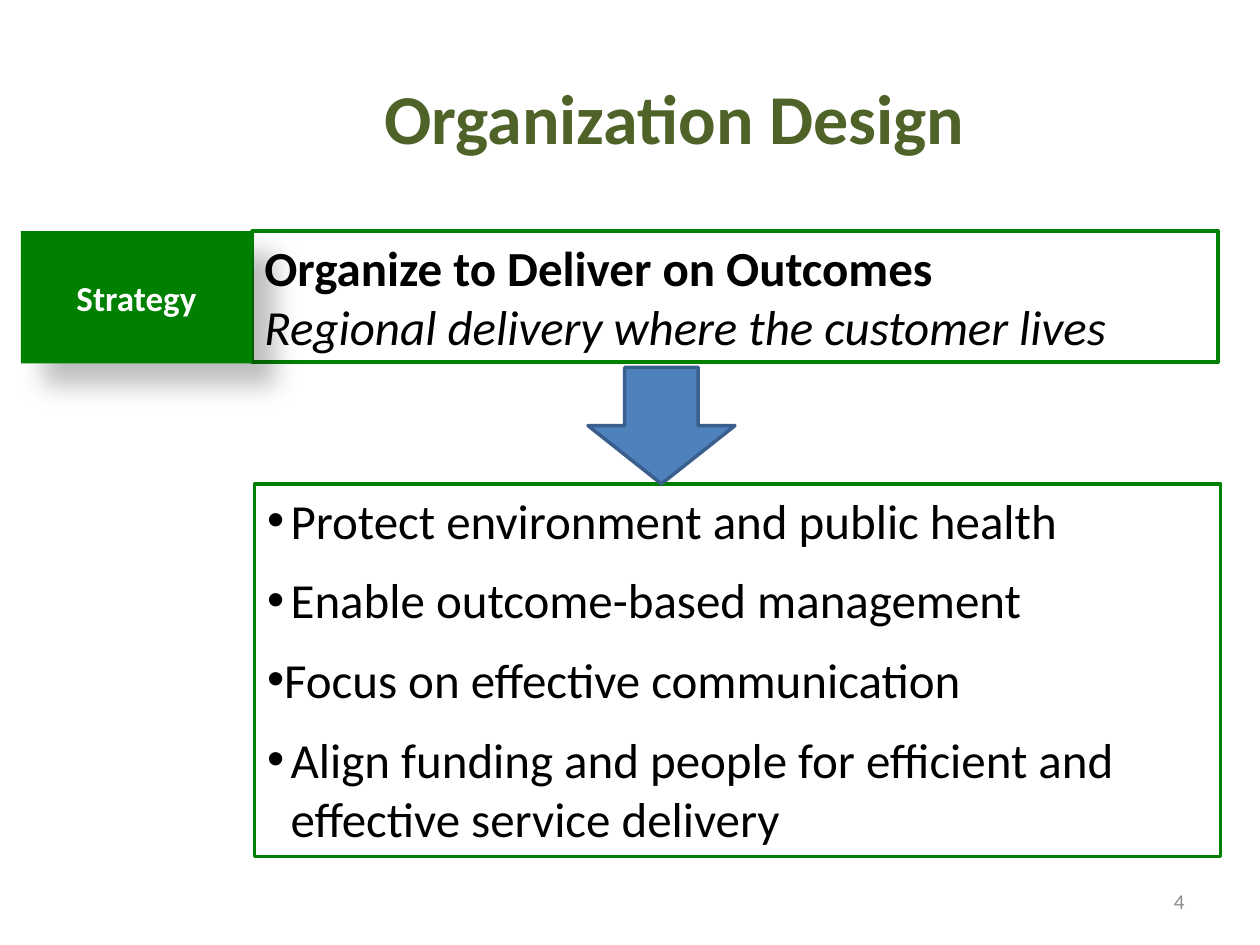
from lxml import etree
from pptx import Presentation
from pptx import util as u
from pptx.dml.color import RGBColor
from pptx.enum import shapes, text
from pptx.oxml import ns

Pt = u.Pt
FONT = "Calibri"
COLORS = {
    "white": "FFFFFF",
    "black": "000000",
    "green": "008000",
    "olive": "4F6228",
    "gray": "8C8C8C",
    "blue": "4F81BD",
    "dark_blue": "3A5F8C",
}
LEFT, CENTER, RIGHT = (text.PP_ALIGN.LEFT, text.PP_ALIGN.CENTER,
                       text.PP_ALIGN.RIGHT)
TOP, MIDDLE = text.MSO_ANCHOR.TOP, text.MSO_ANCHOR.MIDDLE

GOALS = [  # wording, hanging indent
    ("Protect environment and public health", 13.5),
    ("Enable outcome-based management", 13.5),
    ("Focus on effective communication", 9),
    ("Align funding and people for efficient and effective service delivery",
     13.5),
]


def rgb(name):
    return RGBColor.from_string(COLORS[name])


def add_run(p, content, size=28, color="black", bold=False, italic=False):
    r = p.add_run()
    r.text = content
    r.font.name = FONT
    r.font.size = Pt(size)
    r.font.bold = bold
    r.font.italic = italic
    r.font.color.rgb = rgb(color)


def set_frame(sp, anchor=TOP, align=LEFT):
    """Prepare the text frame and return its first paragraph."""
    tf = sp.text_frame
    tf.word_wrap = True
    tf.vertical_anchor = anchor
    p = tf.paragraphs[0]
    p.alignment = align
    return p


def add_label(s, content, box, align=CENTER, **fmt):
    sp = s.shapes.add_textbox(*map(Pt, box))
    add_run(set_frame(sp, MIDDLE, align), content, **fmt)


def add_block(s, kind, box, fill, line=None):
    sp = s.shapes.add_shape(kind, *map(Pt, box))
    sp.shadow.inherit = False
    sp.fill.solid()
    sp.fill.fore_color.rgb = rgb(fill)
    if line:
        sp.line.color.rgb = rgb(line)
        sp.line.width = Pt(2)
    else:
        sp.line.fill.background()
    return sp


def add_shadow(sp, blur, distance, angle, opacity):
    effects = sp._element.spPr.find(ns.qn("a:effectLst"))
    shadow = etree.SubElement(
        effects, ns.qn("a:outerShdw"), blurRad=str(Pt(blur)),
        dist=str(Pt(distance)), dir=str(angle * 60000), algn="tl",
        rotWithShape="0")
    clr = etree.SubElement(shadow, ns.qn("a:srgbClr"), val=COLORS["black"])
    etree.SubElement(clr, ns.qn("a:alpha"), val=str(opacity * 1000))


def set_bullet(p, indent):
    pPr = p._p.get_or_add_pPr()
    pPr.set("marL", str(Pt(indent)))
    pPr.set("indent", str(-Pt(indent)))
    etree.SubElement(pPr, ns.qn("a:buFont"), typeface="Arial")
    etree.SubElement(pPr, ns.qn("a:buChar"), char="•")


def add_goals(s, box):
    sp = add_block(s, shapes.MSO_SHAPE.RECTANGLE, box, "white", "green")
    p = set_frame(sp)
    for i, (goal, indent) in enumerate(GOALS):
        if i:
            p = sp.text_frame.add_paragraph()
        p.alignment = LEFT
        p.space_after = Pt(12)
        set_bullet(p, indent)
        add_run(p, goal)


def add_strategy(s):
    rect = shapes.MSO_SHAPE.RECTANGLE
    p = set_frame(add_block(s, rect, (144, 132, 552, 75), "white", "green"))
    add_run(p, "Organize to Deliver on Outcomes", bold=True)
    p.add_line_break()
    add_run(p, "Regional delivery where the customer lives", italic=True)

    tag = add_block(s, rect, (12, 132, 132, 75.6), "green")
    add_shadow(tag, blur=15, distance=18, angle=45, opacity=26)
    add_run(set_frame(tag, MIDDLE, CENTER), "Strategy", size=20,
            color="white", bold=True)


def main():
    prs = Presentation()
    prs.slide_width, prs.slide_height = Pt(720), Pt(540)
    s = prs.slides.add_slide(prs.slide_layouts[6])
    add_goals(s, (145.5, 276.5, 552, 213))
    # The trailing space shifts the centred title slightly left.
    add_label(s, "Organization Design ", (66, 21.6, 648, 90), size=40,
              color="olive", bold=True)
    add_label(s, "4", (516, 500.5, 168, 28.75), align=RIGHT, size=12,
              color="gray")
    add_strategy(s)
    add_block(s, shapes.MSO_SHAPE.DOWN_ARROW, (336, 210, 84, 66.5),
              "blue", "dark_blue")
    prs.save("out.pptx")


if __name__ == "__main__":
    main()
